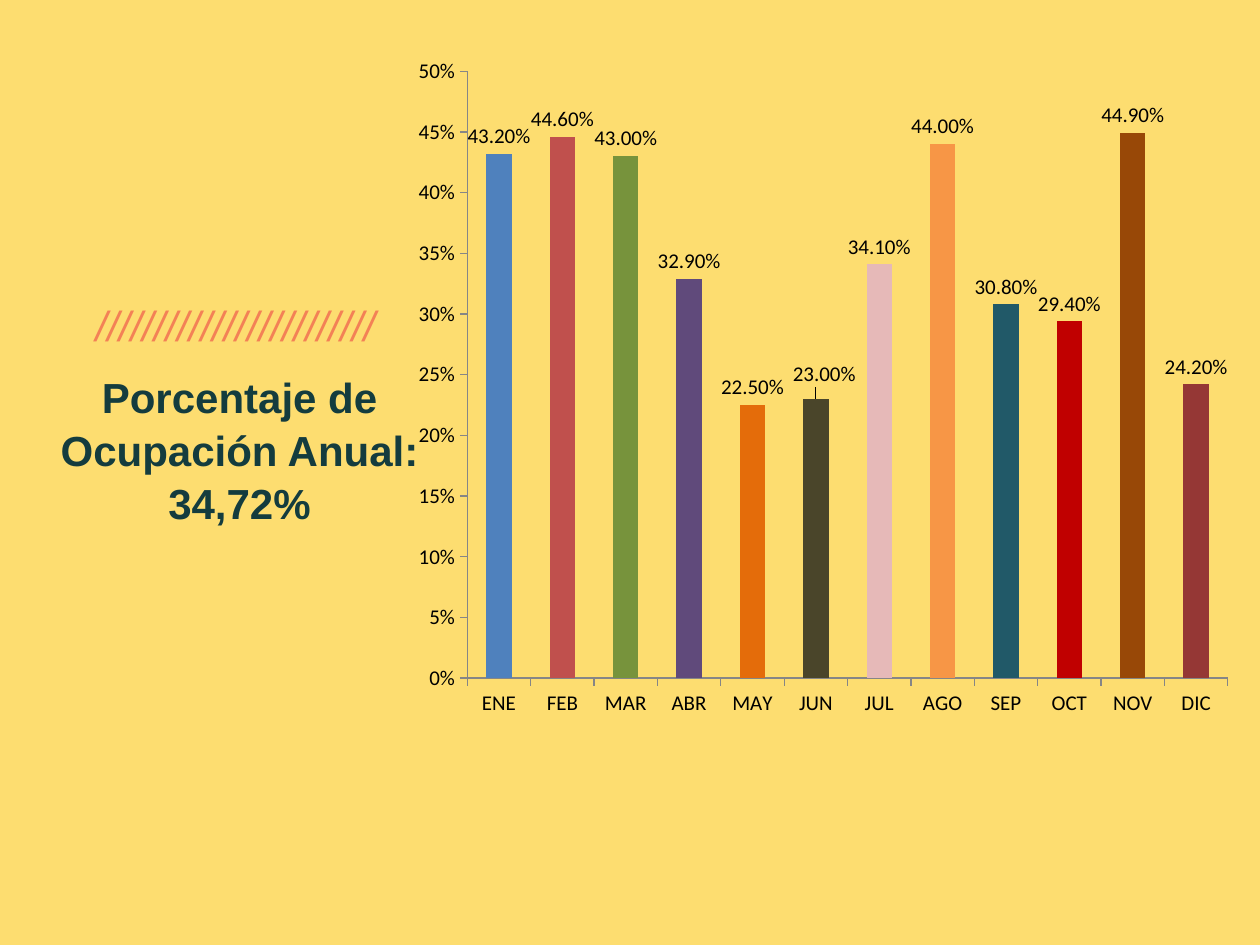
from dataclasses import dataclass

from lxml import etree
from pptx import Presentation
from pptx.chart.data import CategoryChartData
from pptx.dml.color import RGBColor
from pptx.enum.chart import XL_CHART_TYPE, XL_LABEL_POSITION, XL_TICK_MARK
from pptx.enum.shapes import MSO_SHAPE
from pptx.enum.text import PP_ALIGN
from pptx.oxml import parse_xml
from pptx.oxml.ns import nsdecls, qn
from pptx.util import Cm, Pt

COLUMN = XL_CHART_TYPE.COLUMN_CLUSTERED
OUTSIDE_END = XL_LABEL_POSITION.OUTSIDE_END
TICK_OUTSIDE = XL_TICK_MARK.OUTSIDE
RECTANGLE = MSO_SHAPE.RECTANGLE
LEFT = PP_ALIGN.LEFT
CENTER = PP_ALIGN.CENTER

YELLOW = RGBColor(0xFD, 0xDD, 0x70)
CREAM = RGBColor(0xEE, 0xEC, 0xE1)
ORANGE = RGBColor(0xF3, 0x81, 0x56)
DARK_TEAL = RGBColor(0x14, 0x3C, 0x3E)
BLACK = RGBColor(0, 0, 0)
GREY = RGBColor(0x86, 0x86, 0x86)
BLUE = RGBColor(0x4F, 0x81, 0xBD)

LABEL_FORMAT = "0.00%"


@dataclass(frozen=True)
class Caption:
    text: str
    left: float
    top: float
    width: float
    height: float
    color: RGBColor
    alignment: PP_ALIGN
    line_spacing: float = 1.0
    bold: bool = False
    italic: bool = False


@dataclass(frozen=True)
class Month:
    name: str
    occupancy: float
    color: RGBColor
    label_shift: tuple[float, float] | None = None


CAPTIONS = [
    Caption("/" * 24, 1.68, 5.92, 7.06, 2.24, ORANGE, LEFT, italic=True),
    Caption("Porcentaje de Ocupación Anual: 34,72%", 0.51, 7.32, 8.64, 3.33,
            DARK_TEAL, CENTER, line_spacing=1.05, bold=True),
]

MONTHS = [
    Month("ENE", 0.432, BLUE),
    Month("FEB", 0.446, RGBColor(0xC0, 0x50, 0x4D)),
    Month("MAR", 0.43, RGBColor(0x77, 0x93, 0x3C)),
    Month("ABR", 0.329, RGBColor(0x60, 0x4A, 0x7B)),
    Month("MAY", 0.225, RGBColor(0xE4, 0x6C, 0x0A)),
    Month("JUN", 0.23, RGBColor(0x4A, 0x45, 0x2A), (0.01, -0.01)),
    Month("JUL", 0.341, RGBColor(0xE6, 0xB9, 0xB8)),
    Month("AGO", 0.44, RGBColor(0xF7, 0x96, 0x46)),
    Month("SEP", 0.308, RGBColor(0x21, 0x59, 0x68)),
    Month("OCT", 0.294, RGBColor(0xC0, 0x00, 0x00)),
    Month("NOV", 0.449, RGBColor(0x98, 0x48, 0x07)),
    Month("DIC", 0.242, RGBColor(0x95, 0x37, 0x35)),
]


def style_font(font) -> None:
    font.name = "Calibri"
    font.size = Pt(12)
    font.color.rgb = BLACK


def add_backdrop(slide) -> None:
    slide.background.fill.solid()
    slide.background.fill.fore_color.rgb = CREAM
    shape = slide.shapes.add_shape(RECTANGLE, Cm(0), Cm(-0.69), Cm(25.45), Cm(19.74))
    shape.shadow.inherit = False
    shape.fill.solid()
    shape.fill.fore_color.rgb = YELLOW
    shape.line.fill.background()


def add_caption(slide, caption: Caption) -> None:
    shape = slide.shapes.add_textbox(
        Cm(caption.left), Cm(caption.top), Cm(caption.width), Cm(caption.height))
    shape.text_frame.word_wrap = True
    paragraph = shape.text_frame.paragraphs[0]
    paragraph.text = caption.text
    paragraph.alignment = caption.alignment
    paragraph.line_spacing = caption.line_spacing
    paragraph.font.name = "Arial"
    paragraph.font.size = Pt(24)
    paragraph.font.bold = caption.bold
    paragraph.font.italic = caption.italic
    paragraph.font.color.rgb = caption.color


def shift_label(series, index: int, shift: tuple[float, float]) -> None:
    label = series.points[index].data_label
    style_font(label.font)
    label.position = OUTSIDE_END
    identifier = series.data_labels._element.find(f"{qn('c:dLbl')}/{qn('c:idx')}")
    layout = parse_xml(f"<c:layout {nsdecls('c')}><c:manualLayout/></c:layout>")
    for axis, distance in zip("xy", shift):
        etree.SubElement(layout[0], qn(f"c:{axis}"), val=str(distance))
    number_format = etree.Element(
        qn("c:numFmt"), formatCode=LABEL_FORMAT, sourceLinked="0")
    identifier.addnext(layout)
    layout.addnext(number_format)


def style_axis(axis) -> None:
    axis.has_major_gridlines = False
    axis.major_tick_mark = TICK_OUTSIDE
    axis.format.line.color.rgb = GREY
    axis.format.line.width = Pt(0.75)
    style_font(axis.tick_labels.font)


def add_occupancy_chart(slide, months: list[Month]) -> None:
    data = CategoryChartData(number_format=LABEL_FORMAT)
    data.categories = [month.name for month in months]
    data.add_series("Series 1", [month.occupancy for month in months])
    chart = slide.shapes.add_chart(
        COLUMN, Cm(8.1), Cm(0.91), Cm(16.99), Cm(13.79), data).chart
    style_font(chart.font)
    chart.has_legend = False
    chart.has_title = False
    style_axis(chart.category_axis)
    value_axis = chart.value_axis
    style_axis(value_axis)
    value_axis.minimum_scale = 0
    value_axis.maximum_scale = 0.5
    value_axis.major_unit = 0.05
    value_axis.tick_labels.number_format = "0%"
    value_axis.tick_labels.number_format_is_linked = False

    plot = chart.plots[0]
    plot.gap_width = 150
    plot.vary_by_categories = False
    series = plot.series[0]
    series.format.fill.solid()
    series.format.fill.fore_color.rgb = BLUE
    labels = series.data_labels
    labels.show_value = True
    labels.number_format = LABEL_FORMAT
    labels.number_format_is_linked = False
    labels.position = OUTSIDE_END
    style_font(labels.font)
    for index, month in enumerate(months):
        fill = series.points[index].format.fill
        fill.solid()
        fill.fore_color.rgb = month.color
        if month.label_shift:
            shift_label(series, index, month.label_shift)


def main() -> None:
    presentation = Presentation()
    presentation.slide_width = Cm(25.4)
    presentation.slide_height = Cm(19.05)
    slide = presentation.slides.add_slide(presentation.slide_layouts[6])
    add_backdrop(slide)
    for caption in CAPTIONS:
        add_caption(slide, caption)
    add_occupancy_chart(slide, MONTHS)
    presentation.save("out.pptx")


if __name__ == "__main__":
    main()
